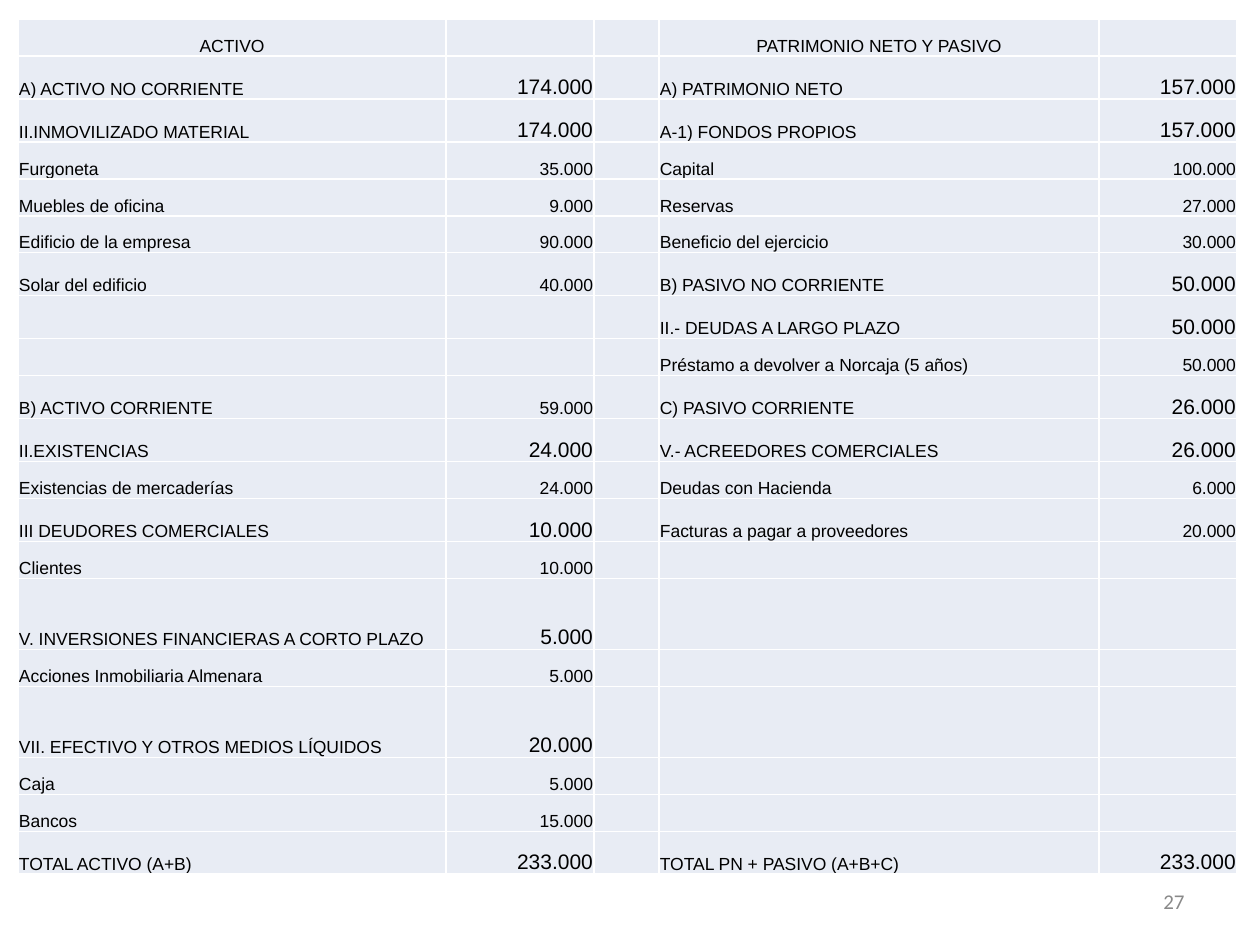
from dataclasses import dataclass
from lxml import etree
from pptx import Presentation
from pptx.dml.color import RGBColor
from pptx.enum.text import MSO_ANCHOR, PP_ALIGN
from pptx.oxml.ns import qn
from pptx.util import Pt

LEFT, MID, RIGHT = PP_ALIGN.LEFT, PP_ALIGN.CENTER, PP_ALIGN.RIGHT
LOW, HALF = MSO_ANCHOR.BOTTOM, MSO_ANCHOR.MIDDLE
SCALE = 914400 / 126


def px(n):
    return round(n * SCALE)


@dataclass
class Theme:
    ink: str = "000000"
    fill: str = "E8ECF4"
    rule: str = "FFFFFF"
    grey: str = "898989"
    font: str = "Arial"
    foot: str = "Calibri"
    small: int = 10
    large: int = 12


class Deck:
    def __init__(self, theme):
        self.theme = theme
        self.prs = Presentation()
        self.prs.slide_width, self.prs.slide_height = px(1260), px(945)
        self.slide = self.prs.slides.add_slide(self.prs.slide_layouts[6])

    def put(self, frame, text, size, color, face, align):
        para = frame.paragraphs[0]
        para.text = text
        para.alignment = align
        font = para.font
        font.size, font.name = Pt(size), face
        font.color.rgb = RGBColor.from_string(color)

    def label(self, x, y, w, h, text):
        box = self.slide.shapes.add_textbox(px(x), px(y), px(w), px(h))
        frame = box.text_frame
        frame.word_wrap = True
        frame.vertical_anchor = HALF
        t = self.theme
        self.put(frame, text, t.large, t.grey, t.foot, RIGHT)

    def border(self, cell):
        props = cell._tc.get_or_add_tcPr()
        for i, side in enumerate(("lnL", "lnR", "lnT", "lnB")):
            line = etree.Element(qn("a:" + side), w=str(Pt(1)))
            solid = etree.SubElement(line, qn("a:solidFill"))
            etree.SubElement(solid, qn("a:srgbClr"), val=self.theme.rule)
            props.insert(i, line)

    def cell(self, cell, text, size, align):
        t = self.theme
        cell.margin_left = cell.margin_right = cell.margin_top = px(1)
        cell.margin_bottom = 0
        cell.vertical_anchor = LOW
        cell.fill.solid()
        cell.fill.fore_color.rgb = RGBColor.from_string(t.fill)
        self.put(cell.text_frame, text, size, t.ink, t.font, align)
        self.border(cell)

    def table(self, x, y, cols, rows, data):
        grid = self.slide.shapes.add_table(
            len(rows), len(cols), px(x), px(y), px(sum(cols)), px(sum(rows))
        ).table
        grid.first_row = grid.horz_banding = False
        for col, w in zip(grid.columns, cols):
            col.width = px(w)
        for row, h, items in zip(grid.rows, rows, data):
            row.height = px(h)
            for cell, item in zip(row.cells, items):
                self.cell(cell, *item)


THIN, TALL, WIDE = 37, 43, 71
COLS = (428, 148, 65, 440, 138)
NONE = ("", "")
MAIN = True

ASSETS = [
    ("ACTIVO", ""),
    ("A) ACTIVO NO CORRIENTE", "174.000", MAIN),
    ("II.INMOVILIZADO MATERIAL", "174.000", MAIN),
    ("Furgoneta", "35.000"),
    ("Muebles de oficina", "9.000"),
    ("Edificio de la empresa", "90.000"),
    ("Solar del edificio", "40.000"),
    NONE,
    NONE,
    ("B) ACTIVO CORRIENTE", "59.000"),
    ("II.EXISTENCIAS", "24.000", MAIN),
    ("Existencias de mercaderías", "24.000"),
    ("III DEUDORES COMERCIALES", "10.000", MAIN),
    ("Clientes", "10.000"),
    ("V. INVERSIONES FINANCIERAS A CORTO PLAZO", "5.000", MAIN),
    ("Acciones Inmobiliaria Almenara", "5.000"),
    ("VII. EFECTIVO Y OTROS MEDIOS LÍQUIDOS", "20.000", MAIN),
    ("Caja", "5.000"),
    ("Bancos", "15.000"),
    ("TOTAL ACTIVO (A+B)", "233.000", MAIN),
]
CLAIMS = [
    ("PATRIMONIO NETO Y PASIVO", ""),
    ("A) PATRIMONIO NETO", "157.000", MAIN),
    ("A-1) FONDOS PROPIOS", "157.000", MAIN),
    ("Capital", "100.000"),
    ("Reservas", "27.000"),
    ("Beneficio del ejercicio", "30.000"),
    ("B) PASIVO NO CORRIENTE", "50.000", MAIN),
    ("II.- DEUDAS A LARGO PLAZO", "50.000", MAIN),
    ("Préstamo a devolver a Norcaja (5 años)", "50.000"),
    ("C) PASIVO CORRIENTE", "26.000", MAIN),
    ("V.- ACREEDORES COMERCIALES", "26.000", MAIN),
    ("Deudas con Hacienda", "6.000"),
    ("Facturas a pagar a proveedores", "20.000"),
    *[NONE] * 6,
    ("TOTAL PN + PASIVO (A+B+C)", "233.000", MAIN),
]


def pair(entry, theme, head):
    name, value, *main = entry
    size = theme.large if main else theme.small
    return [(name, theme.small, MID if head else LEFT), (value, size, RIGHT)]


def height(left, right):
    if len(left[0]) > 35:
        return WIDE
    return TALL if MAIN in left + right else THIN


def main():
    theme = Theme()
    deck = Deck(theme)
    lines = list(zip(ASSETS, CLAIMS))
    gap = [("", theme.small, LEFT)]
    data = [
        pair(a, theme, i == 0) + gap + pair(c, theme, i == 0)
        for i, (a, c) in enumerate(lines)
    ]
    deck.label(903, 876, 294, 50, "27")
    deck.table(18, 19, COLS, [height(a, c) for a, c in lines], data)
    deck.prs.save("out.pptx")


if __name__ == "__main__":
    main()
